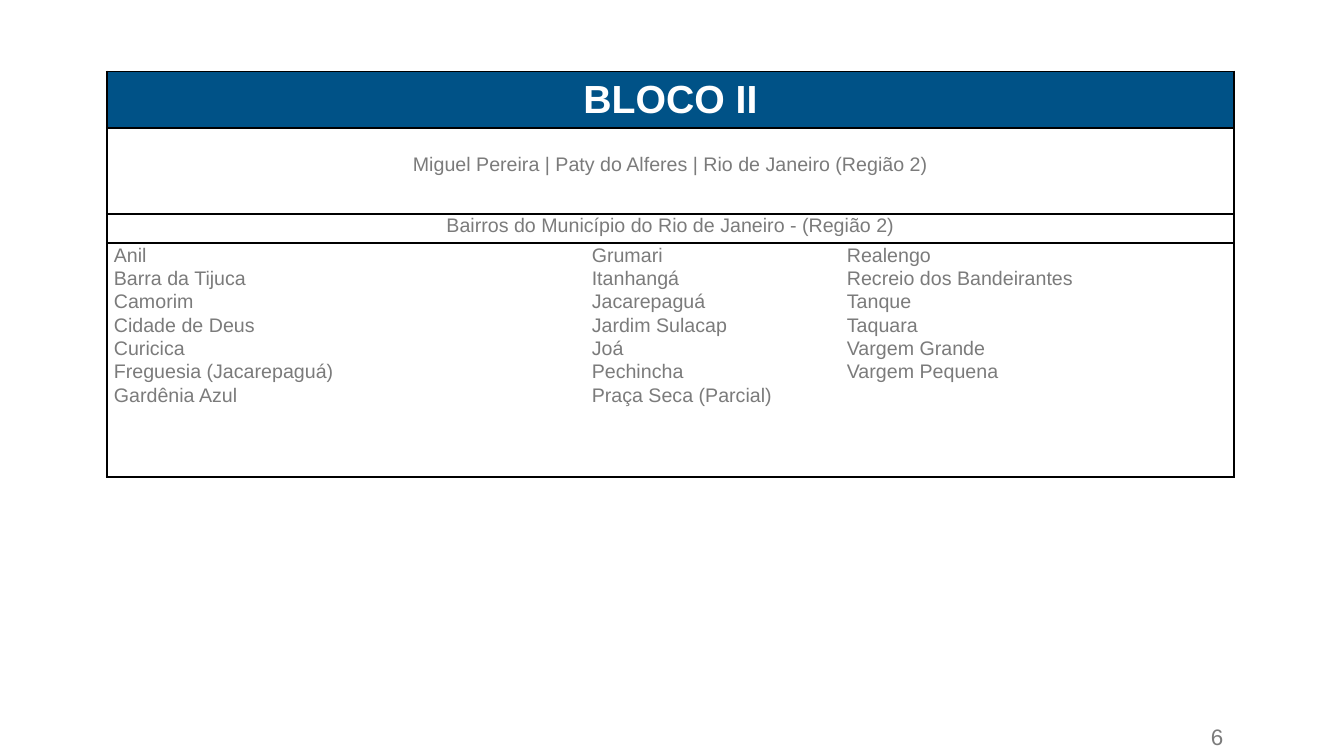
from dataclasses import dataclass
from lxml.etree import SubElement
from pptx import Presentation
from pptx.dml.color import RGBColor
from pptx.enum.text import PP_ALIGN
from pptx.oxml.ns import qn
from pptx.slide import Slide
from pptx.table import Table, _Cell
from pptx.text.text import TextFrame
from pptx.util import Inches, Pt


@dataclass(frozen=True)
class Theme:
    font: str = "Arial"
    navy: str = "005287"
    white: str = "FFFFFF"
    gray: str = "7B7B7B"
    black: str = "000000"
    head: float = 28
    body: float = 14
    page: float = 16
    rule: float = 1.5


@dataclass(frozen=True)
class Style:
    size: float
    color: str
    bold: bool = False
    align: PP_ALIGN = PP_ALIGN.LEFT
    space: float = 1.0


@dataclass(frozen=True)
class Band:
    height: float
    texts: tuple[str, ...]
    style: Style
    fill: str | None = None
    top: float = 0


THEME = Theme()
HEAD = Style(THEME.head, THEME.white, True, PP_ALIGN.CENTER, 1.15)
NOTE = Style(THEME.body, THEME.gray, False, PP_ALIGN.CENTER, 1.06)
LIST = Style(THEME.body, THEME.gray, False, PP_ALIGN.JUSTIFY, 1.06)
PAGE = Style(THEME.page, THEME.gray)

WIDTHS = (4.74, 2.53, 3.91)
AREAS = (
    "Anil\nBarra da Tijuca\nCamorim\nCidade de Deus\nCuricica\n"
    "Freguesia (Jacarepaguá)\nGardênia Azul",
    "Grumari\nItanhangá\nJacarepaguá\nJardim Sulacap\nJoá\n"
    "Pechincha\nPraça Seca (Parcial)",
    "Realengo\nRecreio dos Bandeirantes\nTanque\nTaquara\n"
    "Vargem Grande\nVargem Pequena",
)
BANDS = (
    Band(0.56, ("BLOCO II",), HEAD, THEME.navy),
    Band(0.85, ("Miguel Pereira | Paty do Alferes | Rio de Janeiro (Região 2)",),
         NOTE, top=0.24),
    Band(0.29, ("Bairros do Município do Rio de Janeiro - (Região 2)",), NOTE),
    Band(2.32, AREAS, LIST),
)


def write(frame: TextFrame, text: str, style: Style) -> None:
    frame.text = text
    for para in frame.paragraphs:
        para.alignment = style.align
        para.line_spacing = style.space
        for run in para.runs:
            run.font.name = THEME.font
            run.font.size = Pt(style.size)
            run.font.bold = style.bold
            run.font.color.rgb = RGBColor.from_string(style.color)


def border(cell: _Cell, sides: str) -> None:
    props = cell._tc.get_or_add_tcPr()
    for side in "LRTB":
        line = SubElement(props, qn(f"a:ln{side}"), w=str(Pt(THEME.rule)))
        if side in sides:
            fill = SubElement(line, qn("a:solidFill"))
            SubElement(fill, qn("a:srgbClr"), val=THEME.black)
        else:
            SubElement(line, qn("a:noFill"))


def fill_band(table: Table, row: int, band: Band) -> None:
    table.rows[row].height = Inches(band.height)
    last = len(WIDTHS) - 1
    merged = len(band.texts) == 1
    if merged:
        table.cell(row, 0).merge(table.cell(row, last))
    for col in range(len(WIDTHS)):
        cell = table.cell(row, col)
        cell.margin_left = cell.margin_right = Inches(0.07)
        cell.margin_top, cell.margin_bottom = Inches(band.top), 0
        left = "L" if col == 0 else ""
        right = "R" if col == last or cell.is_merge_origin else ""
        border(cell, left + right + "TB")
        if band.fill:
            cell.fill.solid()
            cell.fill.fore_color.rgb = RGBColor.from_string(band.fill)
        else:
            cell.fill.background()
        if col < len(band.texts):
            write(cell.text_frame, band.texts[col], band.style)


def add_grid(slide: Slide) -> None:
    height = sum(band.height for band in BANDS)
    table = slide.shapes.add_table(
        len(BANDS), len(WIDTHS), Inches(1.06), Inches(0.71),
        Inches(sum(WIDTHS)), Inches(height)).table
    table.first_row = table.horz_banding = False
    for column, width in zip(table.columns, WIDTHS):
        column.width = Inches(width)
    for row, band in enumerate(BANDS):
        fill_band(table, row, band)


def add_page(slide: Slide, text: str) -> None:
    box = slide.shapes.add_textbox(
        Inches(11.96), Inches(7.12), Inches(1.38), Inches(0.37))
    frame = box.text_frame
    frame.word_wrap = True
    frame.margin_left = frame.margin_right = Inches(0.05)
    frame.margin_top = frame.margin_bottom = Inches(0.05)
    write(frame, text, PAGE)


def main() -> None:
    deck = Presentation()
    deck.slide_width, deck.slide_height = Inches(13.33), Inches(7.5)
    slide = deck.slides.add_slide(deck.slide_layouts[6])
    add_page(slide, "6")
    add_grid(slide)
    deck.save("out.pptx")


if __name__ == "__main__":
    main()
